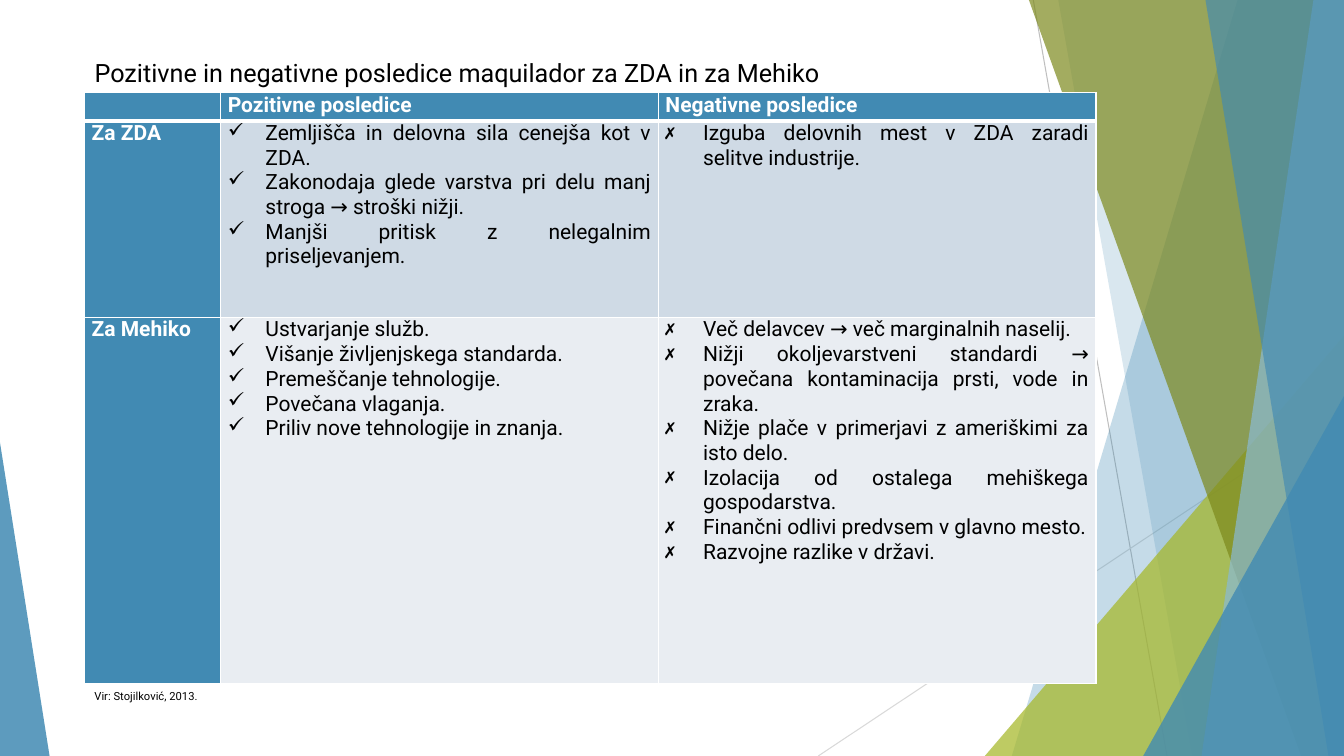
from lxml import etree
from pptx import Presentation
from pptx.dml.color import RGBColor
from pptx.enum.shapes import MSO_CONNECTOR, MSO_SHAPE
from pptx.enum.text import MSO_ANCHOR, PP_ALIGN
from pptx.oxml.ns import qn
from pptx.util import Cm, Pt

STRAIGHT = MSO_CONNECTOR.STRAIGHT
TRIANGLE = MSO_SHAPE.ISOSCELES_TRIANGLE
LEFT, JUSTIFY = PP_ALIGN.LEFT, PP_ALIGN.JUSTIFY
TOP = MSO_ANCHOR.TOP

FONT = "Roboto"
WIDTH, HEIGHT = 33.87, 19.05
TITLE_ONLY = 5
COLORS = {
    "blue": "418AB3", "light_blue": "8ABAD4", "green": "A6B727", "olive": "7D891D",
    "gray": "BFBFBF", "light_gray": "D9D9D9", "white": "FFFFFF", "black": "000000",
    "row_dark": "CFDAE5", "row_light": "E9EDF2",
}
BORDER_SIDES = ("lnL", "lnR", "lnT", "lnB")

TITLE = "Pozitivne in negativne posledice maquilador za ZDA in za Mehiko"
SOURCE = "Vir: Stojilković, 2013."
HEADERS = ("", "Pozitivne posledice", "Negativne posledice")
COLUMN_WIDTHS = (3.43, 11.03, 11.03)
ROW_HEIGHTS = (0.71, 4.95, 9.22)
COUNTRIES = [
    ("Za ZDA", "row_dark",
     ["Zemljišča in delovna sila cenejša kot v ZDA.",
      "Zakonodaja glede varstva pri delu manj stroga → stroški nižji.",
      "Manjši pritisk z nelegalnim priseljevanjem."],
     ["Izguba delovnih mest v ZDA zaradi selitve industrije."]),
    ("Za Mehiko", "row_light",
     ["Ustvarjanje služb.",
      "Višanje življenjskega standarda.",
      "Premeščanje tehnologije.",
      "Povečana vlaganja.",
      "Priliv nove tehnologije in znanja."],
     ["Več delavcev → več marginalnih naselij.",
      "Nižji okoljevarstveni standardi → povečana kontaminacija prsti, vode in zraka.",
      "Nižje plače v primerjavi z ameriškimi za isto delo.",
      "Izolacija od ostalega mehiškega gospodarstva.",
      "Finančni odlivi predvsem v glavno mesto.",
      "Razvojne razlike v državi."]),
]


def rgb(name):
    return RGBColor.from_string(COLORS[name])


def add_run(paragraph, text, size, color="black", bold=False):
    run = paragraph.add_run()
    run.text = text
    run.font.name = FONT
    run.font.size = Pt(size)
    run.font.bold = bold
    run.font.color.rgb = rgb(color)


def paint(shape, color, opacity):
    """Give a shape a translucent fill (opacity in percent) and no outline."""
    shape.shadow.inherit = False
    shape.line.fill.background()
    shape.fill.solid()
    shape.fill.fore_color.rgb = rgb(color)
    color_element = shape._element.spPr.find(".//" + qn("a:srgbClr"))
    etree.SubElement(color_element, qn("a:alpha"), val=str(opacity * 1000))


def add_line(slide, start_x, start_y, end_x, end_y, color):
    line = slide.shapes.add_connector(
        STRAIGHT, Cm(start_x), Cm(start_y), Cm(end_x), Cm(end_y))
    line.line.color.rgb = rgb(color)
    line.line.width = Pt(0.75)
    etree.SubElement(line._element.spPr, qn("a:effectLst"))


def add_band(slide, top_x, bottom_x, color, opacity):
    """Full-height band from a slanted left edge to the right slide edge."""
    builder = slide.shapes.build_freeform(Cm(top_x), 0)
    builder.add_line_segments([
        (Cm(WIDTH), 0), (Cm(WIDTH), Cm(HEIGHT)), (Cm(bottom_x), Cm(HEIGHT))])
    paint(builder.convert_to_shape(), color, opacity)


def add_corner(slide, left, top, width, apex, color, opacity):
    """Right triangle standing on the bottom edge; apex is 0 (left) or 1 (right)."""
    shape = slide.shapes.add_shape(
        TRIANGLE, Cm(left), Cm(top), Cm(width), Cm(HEIGHT - top))
    shape.adjustments[0] = apex
    paint(shape, color, opacity)


def add_background(slide):
    add_line(slide, 26.04, 0, 29.41, HEIGHT, "gray")
    add_line(slide, WIDTH, 10.24, 20.62, HEIGHT, "light_gray")
    add_band(slide, 31.19, 25.5, "blue", 30)
    add_band(slide, 26.67, 30.05, "blue", 20)
    add_corner(slide, 24.82, 8.46, 9.05, 1, "green", 72)
    add_band(slide, 25.93, 32.79, "olive", 70)
    add_band(slide, 33.1, 30.28, "light_blue", 70)
    add_band(slide, 30.38, 33.48, "blue", 65)
    add_corner(slide, 28.81, 9.98, 5.06, 1, "blue", 80)
    add_corner(slide, 0, 11.15, 1.25, 0, "blue", 85)


def set_title(slide):
    title = slide.shapes.title
    title.left, title.top, title.width, title.height = Cm(2.13), Cm(1.32), Cm(26.37), Cm(1.02)
    title.text_frame.vertical_anchor = TOP
    paragraph = title.text_frame.paragraphs[0]
    paragraph.alignment = LEFT
    add_run(paragraph, TITLE, 18)


def add_source(slide):
    box = slide.shapes.add_textbox(Cm(2.13), Cm(17.25), Cm(3.3), Cm(0.61))
    box.text_frame.word_wrap = False
    add_run(box.text_frame.paragraphs[0], SOURCE, 8)


def set_borders(cell, bottom_width):
    properties = cell._tc.get_or_add_tcPr()
    for position, side in enumerate(BORDER_SIDES):
        width = bottom_width if side == "lnB" else 1
        border = etree.Element(qn("a:" + side), w=str(Pt(width)))
        fill = etree.SubElement(border, qn("a:solidFill"))
        etree.SubElement(fill, qn("a:srgbClr"), val=COLORS["white"])
        properties.insert(position, border)


def format_cell(cell, fill, bottom_width=1):
    cell.margin_left = cell.margin_right = Cm(0.18)
    cell.margin_top = cell.margin_bottom = 0
    cell.fill.solid()
    cell.fill.fore_color.rgb = rgb(fill)
    set_borders(cell, bottom_width)


def fill_heading(cell, text, bottom_width=1):
    format_cell(cell, "blue", bottom_width)
    paragraph = cell.text_frame.paragraphs[0]
    paragraph.alignment = JUSTIFY
    if text:
        add_run(paragraph, text, 15, "white", True)
    else:
        etree.SubElement(paragraph._p, qn("a:endParaRPr"), sz="1500")


def fill_list(cell, items, bullet, fill):
    format_cell(cell, fill)
    frame = cell.text_frame
    for index, item in enumerate(items):
        paragraph = frame.add_paragraph() if index else frame.paragraphs[0]
        paragraph.alignment = JUSTIFY
        properties = paragraph._p.get_or_add_pPr()
        properties.set("marL", str(Cm(0.95)))
        properties.set("indent", str(-Cm(0.95)))
        etree.SubElement(properties, qn("a:buChar"), char=bullet)
        add_run(paragraph, item, 15)


def add_consequences_table(slide):
    table = slide.shapes.add_table(
        len(ROW_HEIGHTS), len(COLUMN_WIDTHS), Cm(2.13), Cm(2.34),
        Cm(sum(COLUMN_WIDTHS)), Cm(sum(ROW_HEIGHTS))).table
    for column, width in zip(table.columns, COLUMN_WIDTHS):
        column.width = Cm(width)
    for row, height in zip(table.rows, ROW_HEIGHTS):
        row.height = Cm(height)
    for column, header in enumerate(HEADERS):
        fill_heading(table.cell(0, column), header, 3)
    for row, (country, fill, positives, negatives) in enumerate(COUNTRIES, 1):
        fill_heading(table.cell(row, 0), country)
        fill_list(table.cell(row, 1), positives, "✓", fill)
        fill_list(table.cell(row, 2), negatives, "✗", fill)


def main():
    presentation = Presentation()
    presentation.slide_width, presentation.slide_height = Cm(WIDTH), Cm(HEIGHT)
    slide = presentation.slides.add_slide(presentation.slide_layouts[TITLE_ONLY])
    add_background(slide)
    add_consequences_table(slide)
    set_title(slide)
    add_source(slide)
    presentation.save("out.pptx")


if __name__ == "__main__":
    main()
